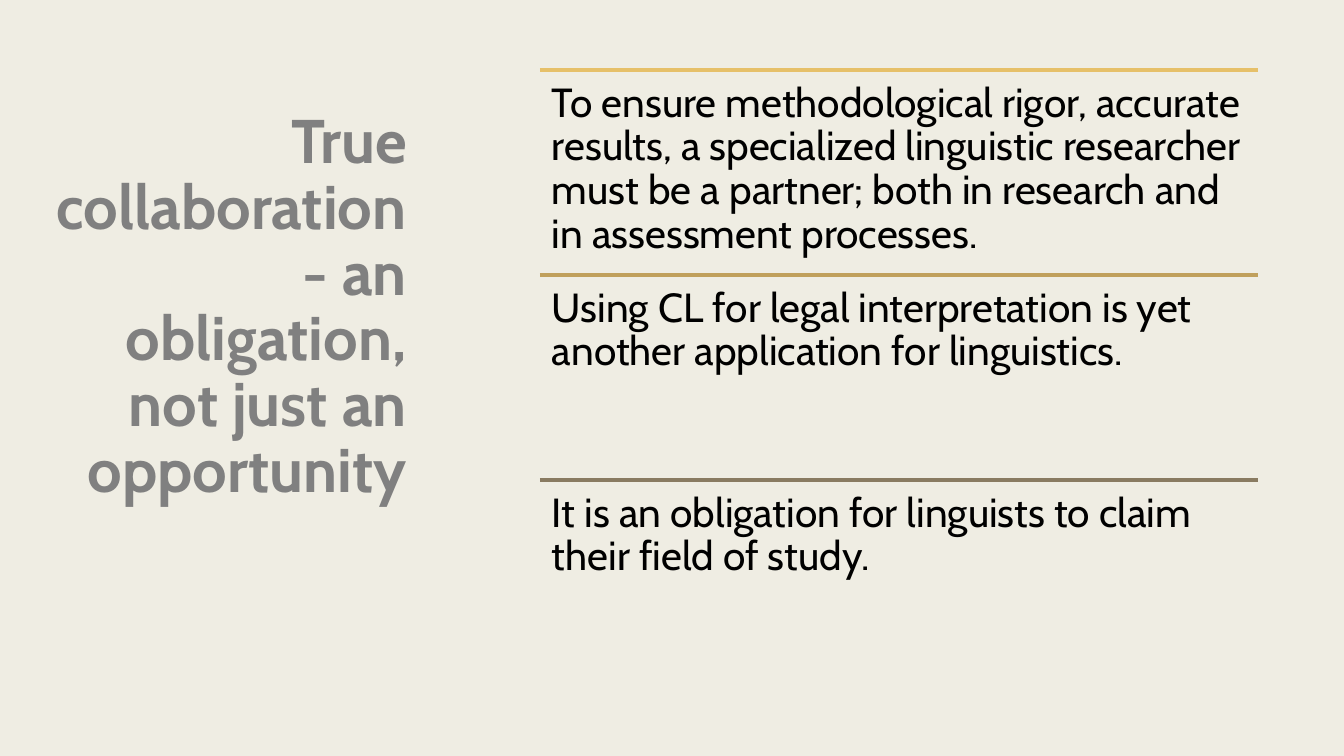
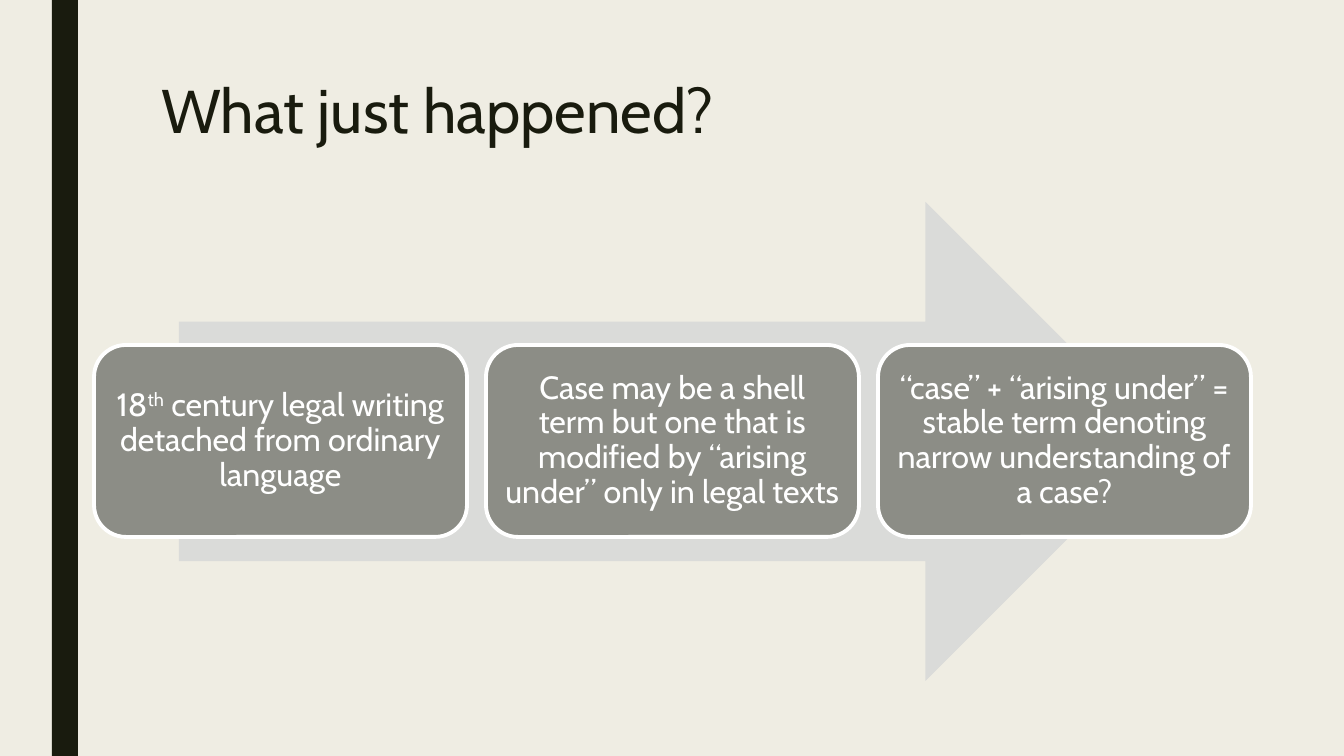
from lxml.etree import SubElement
from pptx import Presentation
from pptx.dml.color import RGBColor
from pptx.enum.shapes import MSO_CONNECTOR as Connector, MSO_SHAPE as Shape
from pptx.enum.text import MSO_ANCHOR as Anchor, MSO_AUTO_SIZE as AutoSize, PP_ALIGN as Align
from pptx.oxml.ns import qn
from pptx.util import Emu, Pt

COLORS = {
    "background": "EFEDE3", "band": "191B0E", "title": "191B0E", "claim": "808080",
    "body": "000000", "arrow": "DADBD9", "card": "8C8D86", "white": "FFFFFF",
}
FONT = "Cabin"
SLIDE_SIZE = (1344, 756)
RULE_WEIGHT = Pt(2.75)

CLAIM = "True collaboration - an obligation, not just an opportunity"
CLAIM_BOX = (32, 106, 385, 543)
POINTS = [
    ("E6C069", "To ensure methodological rigor, accurate results, a specialized linguistic "
               "researcher must be a partner; both in research and in assessment processes."),
    ("C0A05C", "Using CL for legal interpretation is yet another application for linguistics."),
    ("897B61", "It is an obligation for linguists to claim their field of study."),
]
POINT_LEFT, POINT_TOP, POINT_WIDTH, POINT_HEIGHT = 540, 70, 718, 205
POINT_INSET = 12

QUESTION = "What just happened?"
QUESTION_BOX = (151, 76, 1058, 163)
BAND_BOX = (52, 0, 26, 756)
ARROW_BOX = (179, 202, 986, 479)
CARDS = [
    [("18", 0), ("th", 30000), (" century legal writing detached from ordinary language", 0)],
    [("Case may be a shell term but one that is modified by “arising under” "
      "only in legal texts", 0)],
    [("“case” + “arising under” = stable term denoting narrow understanding of a case?", 0)],
]
CARD_LEFT, CARD_TOP, CARD_WIDTH, CARD_HEIGHT = 94, 345, 373, 192
CARD_GAP = 19
CARD_INSET = 10

TITLE_STYLE = {"size": Pt(44), "name": FONT}
POINT_STYLE = {"size": Pt(29), "name": FONT}
CARD_STYLE = {"size": Pt(23), "name": FONT}


def px(length):
    return Emu(round(length * 12192000 / SLIDE_SIZE[0]))


def place(box):
    return [px(length) for length in box]


def rgb(value):
    return RGBColor.from_string(value)


def write(shape, spans, style, color, align=Align.LEFT, anchor=Anchor.TOP,
          inset=None, spacing=0.9):
    frame = shape.text_frame
    settings = {"word_wrap": True, "auto_size": AutoSize.NONE, "vertical_anchor": anchor}
    if inset is not None:
        for side in ("left", "top", "right", "bottom"):
            settings[f"margin_{side}"] = px(inset)
    for name, value in settings.items():
        setattr(frame, name, value)
    para = frame.paragraphs[0]
    para.alignment = align
    para.line_spacing = spacing
    for text, baseline in spans:
        span = para.add_run()
        span.text = text
        for name, value in style.items():
            setattr(span.font, name, value)
        span.font.color.rgb = rgb(color)
        if baseline:
            span._r.get_or_add_rPr().set("baseline", str(baseline))


def set_title(page, text, box, color, align=Align.LEFT, bold=False):
    title = page.shapes.title
    title.left, title.top, title.width, title.height = place(box)
    write(title, [(text, 0)], {**TITLE_STYLE, "bold": bold}, color, align, spacing=0.89)


def add_block(page, kind, box, fill, line=None):
    block = page.shapes.add_shape(kind, *place(box))
    block.shadow.inherit = False
    block.fill.solid()
    block.fill.fore_color.rgb = rgb(fill)
    if line:
        block.line.color.rgb = rgb(line)
        block.line.width = RULE_WEIGHT
    else:
        block.line.fill.background()
    return block


def add_rule(page, left, top, width, color):
    rule = page.shapes.add_connector(
        Connector.STRAIGHT, *place((left, top, left + width, top)))
    rule.line.color.rgb = rgb(color)
    rule.line.width = RULE_WEIGHT
    SubElement(rule._element.spPr, qn("a:effectLst"))


def build_claim(page):
    for index, (color, text) in enumerate(POINTS):
        top = POINT_TOP + index * POINT_HEIGHT
        add_rule(page, POINT_LEFT, top, POINT_WIDTH, color)
        box = page.shapes.add_textbox(
            *place((POINT_LEFT, top, POINT_WIDTH, POINT_HEIGHT)))
        write(box, [(text, 0)], POINT_STYLE, COLORS["body"], inset=POINT_INSET)
    set_title(page, CLAIM, CLAIM_BOX, COLORS["claim"], Align.RIGHT, bold=True)


def build_question(page):
    add_block(page, Shape.RECTANGLE, BAND_BOX, COLORS["band"])
    set_title(page, QUESTION, QUESTION_BOX, COLORS["title"])
    add_block(page, Shape.RIGHT_ARROW, ARROW_BOX, COLORS["arrow"])
    for index, spans in enumerate(CARDS):
        left = CARD_LEFT + index * (CARD_WIDTH + CARD_GAP)
        card = add_block(page, Shape.ROUNDED_RECTANGLE,
                         (left, CARD_TOP, CARD_WIDTH, CARD_HEIGHT),
                         COLORS["card"], COLORS["white"])
        write(card, spans, CARD_STYLE, COLORS["white"], Align.CENTER, Anchor.MIDDLE,
              CARD_INSET)


def main():
    deck = Presentation()
    deck.slide_width, deck.slide_height = place(SLIDE_SIZE)
    backdrop = deck.slide_master.background.fill
    backdrop.solid()
    backdrop.fore_color.rgb = rgb(COLORS["background"])
    for build in (build_claim, build_question):
        build(deck.slides.add_slide(deck.slide_layouts[5]))
    deck.save("out.pptx")


if __name__ == "__main__":
    main()
